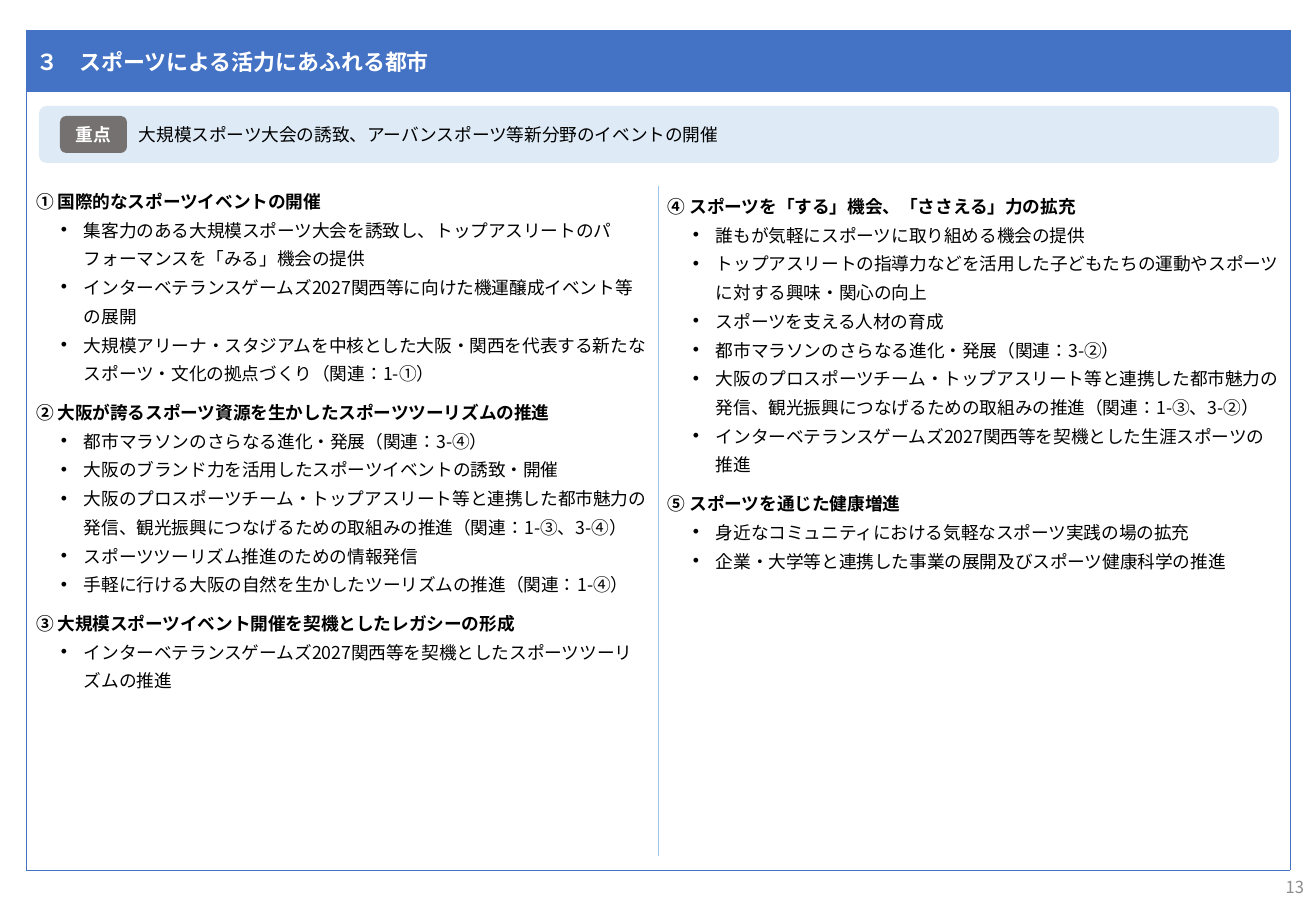
"""Builds the slide on sports-driven city vitality."""
from dataclasses import dataclass

from lxml import etree
from pptx import Presentation
from pptx.dml.color import RGBColor
from pptx.enum.lang import MSO_LANGUAGE_ID
from pptx.enum.shapes import MSO_CONNECTOR, MSO_SHAPE
from pptx.enum.text import MSO_ANCHOR, PP_ALIGN
from pptx.oxml.ns import qn
from pptx.util import Pt

ROUNDED = MSO_SHAPE.ROUNDED_RECTANGLE
STRAIGHT = MSO_CONNECTOR.STRAIGHT
MIDDLE, TOP = MSO_ANCHOR.MIDDLE, MSO_ANCHOR.TOP
LEFT, CENTER, RIGHT = PP_ALIGN.LEFT, PP_ALIGN.CENTER, PP_ALIGN.RIGHT
JAPANESE = MSO_LANGUAGE_ID.JAPANESE
EMU_PER_PX = 7526


@dataclass(frozen=True)
class Theme:
    font: str = "Noto Sans CJK JP"
    blue: str = "4472C4"
    divider: str = "9DC3E6"
    band: str = "DEEBF7"
    chip: str = "767171"
    white: str = "FFFFFF"
    black: str = "000000"
    grey: str = "8C8C8C"
    title_size: float = 13
    body_size: float = 10.5
    page_size: float = 9.8
    line_width: float = 0.5


THEME = Theme()

LEFT_TOPICS = [
    ("① 国際的なスポーツイベントの開催", [
        "集客力のある大規模スポーツ大会を誘致し、トップアスリートのパフォーマンスを「みる」機会の提供",
        "インターベテランスゲームズ2027関西等に向けた機運醸成イベント等の展開",
        "大規模アリーナ・スタジアムを中核とした大阪・関西を代表する新たなスポーツ・文化の拠点づくり（関連：1-①）",
    ]),
    ("② 大阪が誇るスポーツ資源を生かしたスポーツツーリズムの推進", [
        "都市マラソンのさらなる進化・発展（関連：3-④）",
        "大阪のブランド力を活用したスポーツイベントの誘致・開催",
        "大阪のプロスポーツチーム・トップアスリート等と連携した都市魅力の発信、観光振興につなげるための取組みの推進（関連：1-③、3-④）",
        "スポーツツーリズム推進のための情報発信",
        "手軽に行ける大阪の自然を生かしたツーリズムの推進（関連：1-④）",
    ]),
    ("③ 大規模スポーツイベント開催を契機としたレガシーの形成", [
        "インターベテランスゲームズ2027関西等を契機としたスポーツツーリズムの推進",
    ]),
]
RIGHT_TOPICS = [
    ("④ スポーツを「する」機会、「ささえる」力の拡充", [
        "誰もが気軽にスポーツに取り組める機会の提供",
        "トップアスリートの指導力などを活用した子どもたちの運動やスポーツに対する興味・関心の向上",
        "スポーツを支える人材の育成",
        "都市マラソンのさらなる進化・発展（関連：3-②）",
        "大阪のプロスポーツチーム・トップアスリート等と連携した都市魅力の発信、観光振興につなげるための取組みの推進（関連：1-③、3-②）",
        "インターベテランスゲームズ2027関西等を契機とした生涯スポーツの推進",
    ]),
    ("⑤ スポーツを通じた健康増進", [
        "身近なコミュニティにおける気軽なスポーツ実践の場の拡充",
        "企業・大学等と連携した事業の展開及びスポーツ健康科学の推進",
    ]),
]


def px(*lengths):
    return [length * EMU_PER_PX for length in lengths]


def apply(target, formats):
    for attribute, value in formats.items():
        setattr(target, attribute, value)


def paint(fill, color):
    fill.solid()
    fill.fore_color.rgb = RGBColor.from_string(color)


def write(paragraph, text, size, color, bold=False, **formats):
    run = paragraph.add_run()
    run.text = text
    apply(run.font, {"size": Pt(size), "bold": bold, "name": THEME.font,
                     "language_id": JAPANESE})
    run.font.color.rgb = RGBColor.from_string(color)
    etree.SubElement(run.font._element, qn("a:ea"), typeface=THEME.font)
    apply(paragraph, formats)


def add_bullet(paragraph):
    indent, hanging = px(48, -23)
    properties = paragraph._p.get_or_add_pPr()
    properties.set("marL", str(indent))
    properties.set("indent", str(hanging))
    etree.SubElement(properties, qn("a:buFont"), typeface="Arial")
    etree.SubElement(properties, qn("a:buChar"), char="•")


def set_borders(cell, visible):
    properties = cell._tc.get_or_add_tcPr()
    for position, side in enumerate("LRTB"):
        border = etree.Element(qn(f"a:ln{side}"), w=str(Pt(THEME.line_width)))
        properties.insert(position, border)
        if side in visible:
            solid = etree.SubElement(border, qn("a:solidFill"))
            etree.SubElement(solid, qn("a:srgbClr"), val=THEME.blue)
        else:
            etree.SubElement(border, qn("a:noFill"))


def format_cell(cell, fill, borders, top_margin, anchor):
    side, top, bottom = px(10, top_margin, 5)
    apply(cell, {"margin_left": side, "margin_right": side, "margin_top": top,
                 "margin_bottom": bottom, "vertical_anchor": anchor})
    paint(cell.fill, fill)
    set_borders(cell, borders)


def write_topics(cell, topics, first_spacing):
    frame = cell.text_frame
    for index, (heading, measures) in enumerate(topics):
        title = frame.add_paragraph() if index else frame.paragraphs[0]
        write(title, heading, THEME.body_size, THEME.black, True,
              line_spacing=Pt(17 if index else first_spacing))
        for number, measure in enumerate(measures, 1):
            item = frame.add_paragraph()
            write(item, measure, THEME.body_size, THEME.black, line_spacing=Pt(17),
                  space_after=Pt(6 if number == len(measures) else 0))
            add_bullet(item)


def add_policy_table(slide):
    table = slide.shapes.add_table(2, 2, *px(26, 30, 1264, 840)).table
    apply(table, {"first_row": False, "horz_banding": False})
    for column in table.columns:
        column.width = px(632)[0]
    for row, height in zip(table.rows, px(61, 779)):
        row.height = height
    title, title_end = table.rows[0].cells
    title.merge(title_end)
    for cell, borders in ((title, "LTRB"), (title_end, "TRB")):
        format_cell(cell, THEME.blue, borders, 5, MIDDLE)
    write(title.text_frame.paragraphs[0], "３　スポーツによる活力にあふれる都市",
          THEME.title_size, THEME.white, True)
    columns = ((LEFT_TOPICS, "LTB", 14), (RIGHT_TOPICS, "TRB", 17))
    for cell, (topics, borders, spacing) in zip(table.rows[1].cells, columns):
        format_cell(cell, THEME.white, borders, 99, TOP)
        write_topics(cell, topics, spacing)


def add_divider(slide):
    divider = slide.shapes.add_connector(STRAIGHT, *px(658, 186, 658, 856))
    divider.line.color.rgb = RGBColor.from_string(THEME.divider)
    divider.line.width = Pt(THEME.line_width)
    etree.SubElement(divider._element.spPr, qn("a:effectLst"))


def add_panel(slide, box, color, corner):
    panel = slide.shapes.add_shape(ROUNDED, *px(*box))
    panel.shadow.inherit = False
    panel.adjustments[0] = corner
    paint(panel.fill, color)
    panel.line.fill.background()
    return panel


def set_label(shape, text, size, color, alignment, bold=False, inset=12):
    side = px(inset)[0]
    frame = shape.text_frame
    apply(frame, {"word_wrap": True, "vertical_anchor": MIDDLE,
                  "margin_left": side, "margin_right": side})
    write(frame.paragraphs[0], text, size, color, bold, alignment=alignment)


def add_label(slide, box, *label):
    set_label(slide.shapes.add_textbox(*px(*box)), *label)


def main():
    deck = Presentation()
    width, height = px(1316, 911)
    apply(deck, {"slide_width": width, "slide_height": height})
    slide = deck.slides.add_slide(deck.slide_layouts[6])
    add_policy_table(slide)
    add_divider(slide)
    add_panel(slide, (39, 106, 1240, 57), THEME.band, 0.13)
    priority = add_panel(slide, (60, 116, 67, 37), THEME.chip, 0.17)
    set_label(priority, "重点", THEME.body_size, THEME.white, CENTER, True, 0)
    add_label(slide, (127, 109, 660, 50), "大規模スポーツ大会の誘致、アーバンスポーツ等新分野のイベントの開催",
              THEME.body_size, THEME.black, LEFT)
    add_label(slide, (1020, 862, 296, 49), "13", THEME.page_size, THEME.grey, RIGHT)
    deck.save("out.pptx")


if __name__ == "__main__":
    main()
